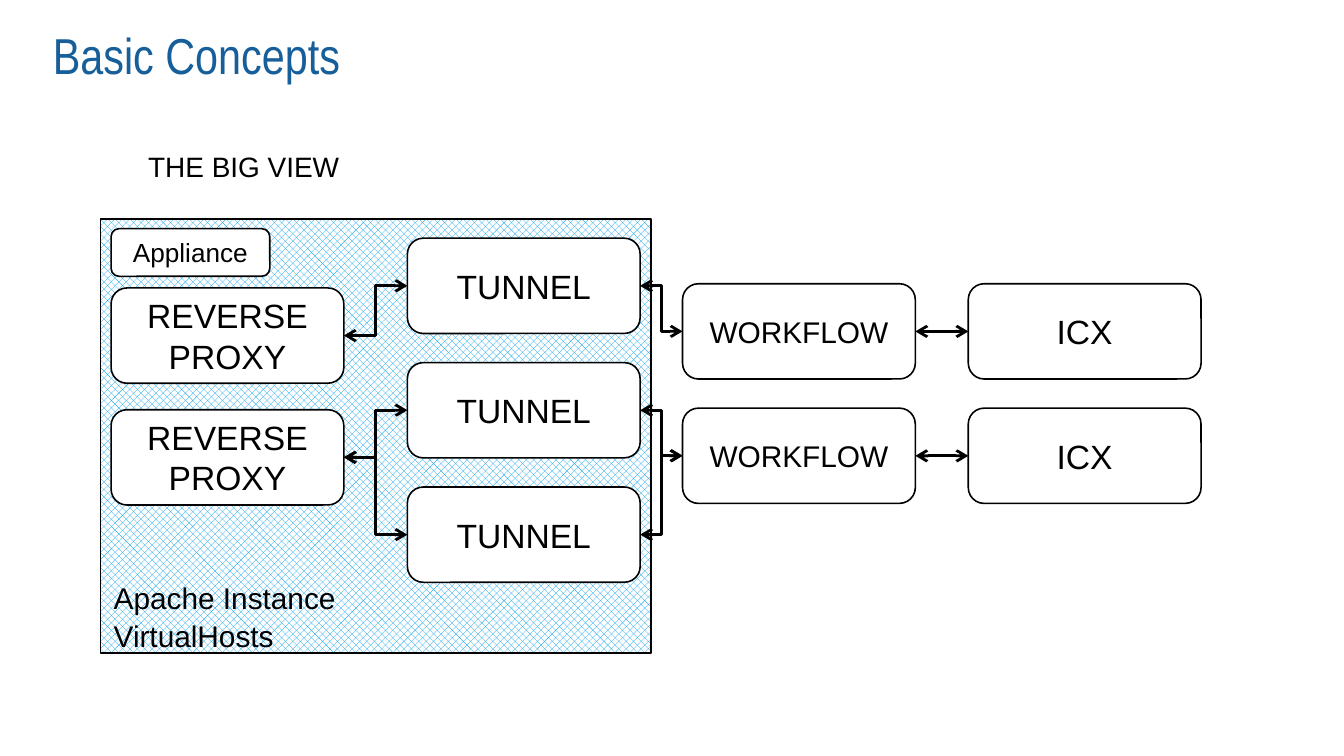
from collections import namedtuple

from pptx import Presentation
from pptx.dml.color import RGBColor
from pptx.enum import dml, shapes, text
from pptx.oxml.ns import qn
from pptx.util import Cm, Pt
from lxml import etree

BLACK = RGBColor(0x00, 0x00, 0x00)
WHITE = RGBColor(0xFF, 0xFF, 0xFF)
TITLE_BLUE = RGBColor(0x16, 0x5F, 0x9A)
HATCH_BLUE = RGBColor(0x00, 0x9D, 0xEC)

Box = namedtuple("Box", "left top width height")  # centimetres

CARD_WIDTH, CARD_HEIGHT = 4.4, 1.8
ROW_PITCH = 2.35
LEFT_SITE, RIGHT_SITE = 1, 3

TITLE_FONT = {"name": "Arial Narrow", "size": Pt(27)}
LABEL_FONT = {"name": "Arial", "size": Pt(18)}


def set_format(target, values):
    for name, value in values.items():
        setattr(target, name, value)


def to_cm(box):
    return [Cm(length) for length in box]


def write(paragraph, wording, font, colour=BLACK):
    paragraph.text = wording
    set_format(paragraph.font, font)
    paragraph.font.color.rgb = colour


def add_heading(slide, box, wording, font, colour=BLACK, line_spacing=1.0):
    frame = slide.shapes.add_textbox(*to_cm(box)).text_frame
    set_format(frame, {"word_wrap": True, "margin_left": 0, "margin_right": 0,
                       "margin_top": 0, "margin_bottom": 0})
    frame.paragraphs[0].line_spacing = line_spacing
    write(frame.paragraphs[0], wording, font, colour)


def add_card(slide, box, wording, size=18):
    card = slide.shapes.add_shape(shapes.MSO_SHAPE.ROUNDED_RECTANGLE, *to_cm(box))
    card.shadow.inherit = False
    card.fill.solid()
    card.fill.fore_color.rgb = WHITE
    card.line.color.rgb = BLACK
    card.line.width = Pt(0.85)
    set_format(card.text_frame, {"word_wrap": True,
                                 "vertical_anchor": text.MSO_ANCHOR.MIDDLE})
    label = card.text_frame.paragraphs[0]
    label.alignment = text.PP_ALIGN.CENTER
    write(label, wording, {**LABEL_FONT, "size": Pt(size)})
    return card


def add_column(slide, left, top, count, wording, size=18, pitch=ROW_PITCH):
    return [add_card(slide, Box(left, top + row * pitch, CARD_WIDTH, CARD_HEIGHT),
                     wording, size)
            for row in range(count)]


def add_appliance(slide, box):
    """Draw the hatched appliance and return its proxies and tunnels."""
    panel = slide.shapes.add_shape(shapes.MSO_SHAPE.RECTANGLE, *to_cm(box))
    panel.shadow.inherit = False
    panel.fill.patterned()
    panel.fill.pattern = dml.MSO_PATTERN.OUTLINED_DIAMOND
    panel.fill.fore_color.rgb = HATCH_BLUE
    panel.fill.back_color.rgb = WHITE
    panel.line.color.rgb = BLACK
    panel.line.width = Pt(1)

    frame = panel.text_frame
    set_format(frame, {"word_wrap": True, "margin_bottom": 0,
                       "vertical_anchor": text.MSO_ANCHOR.BOTTOM})
    instance, hosts = frame.paragraphs[0], frame.add_paragraph()
    for paragraph, wording in ((instance, "Apache Instance"), (hosts, "VirtualHosts")):
        paragraph.alignment = text.PP_ALIGN.LEFT
        write(paragraph, wording, {**LABEL_FONT, "size": Pt(16)})
    hosts.space_before = Pt(1)

    inner_left = box.left + 0.2
    add_card(slide, Box(inner_left, box.top + 0.18, 3, 0.9), "Appliance", 14)
    proxies = add_column(slide, inner_left, box.top + 1.3, 2, "REVERSE PROXY", pitch=2.3)
    tunnel_left = box.left + box.width - 0.2 - CARD_WIDTH
    tunnels = add_column(slide, tunnel_left, box.top + 0.36, 3, "TUNNEL")
    return proxies, tunnels


def add_backend(slide, box):
    """Draw the workflows and their ICX cards, and return the workflows."""
    workflows = add_column(slide, box.left, box.top, 2, "WORKFLOW", 16)
    icx_left = box.left + box.width - CARD_WIDTH
    icx_cards = add_column(slide, icx_left, box.top, 2, "ICX")
    for workflow, icx in zip(workflows, icx_cards):
        add_link(slide, workflow, icx, shapes.MSO_CONNECTOR.STRAIGHT)
    return workflows


def add_link(slide, source, target, kind=shapes.MSO_CONNECTOR.ELBOW):
    """Join the right side of source to the left side of target, arrows at both ends."""
    link = slide.shapes.add_connector(kind, 0, 0, 0, 0)
    link.begin_connect(source, RIGHT_SITE)
    link.end_connect(target, LEFT_SITE)
    link.line.color.rgb = BLACK
    link.line.width = Pt(1.5)
    line = link.line._get_or_add_ln()
    for end in ("a:headEnd", "a:tailEnd"):
        etree.SubElement(line, qn(end), type="arrow")
    etree.SubElement(link._element.spPr, qn("a:effectLst"))


def main():
    deck = Presentation()
    deck.slide_width, deck.slide_height = Cm(25.4), Cm(14.28)
    slide = deck.slides.add_slide(deck.slide_layouts[6])

    add_heading(slide, Box(1, 0.46, 23, 2.26), "Basic Concepts", TITLE_FONT, TITLE_BLUE)
    add_heading(slide, Box(2.8, 2.74, 22.6, 1), "THE BIG VIEW",
                {**LABEL_FONT, "size": Pt(15)}, line_spacing=1.12)

    proxies, tunnels = add_appliance(slide, Box(1.9, 4.14, 10.4, 8.2))
    workflows = add_backend(slide, Box(12.9, 5.36, 9.8, 4.15))
    for tunnel, row in zip(tunnels, (0, 1, 1)):
        add_link(slide, proxies[row], tunnel)
        add_link(slide, tunnel, workflows[row])

    deck.save("out.pptx")


if __name__ == "__main__":
    main()
